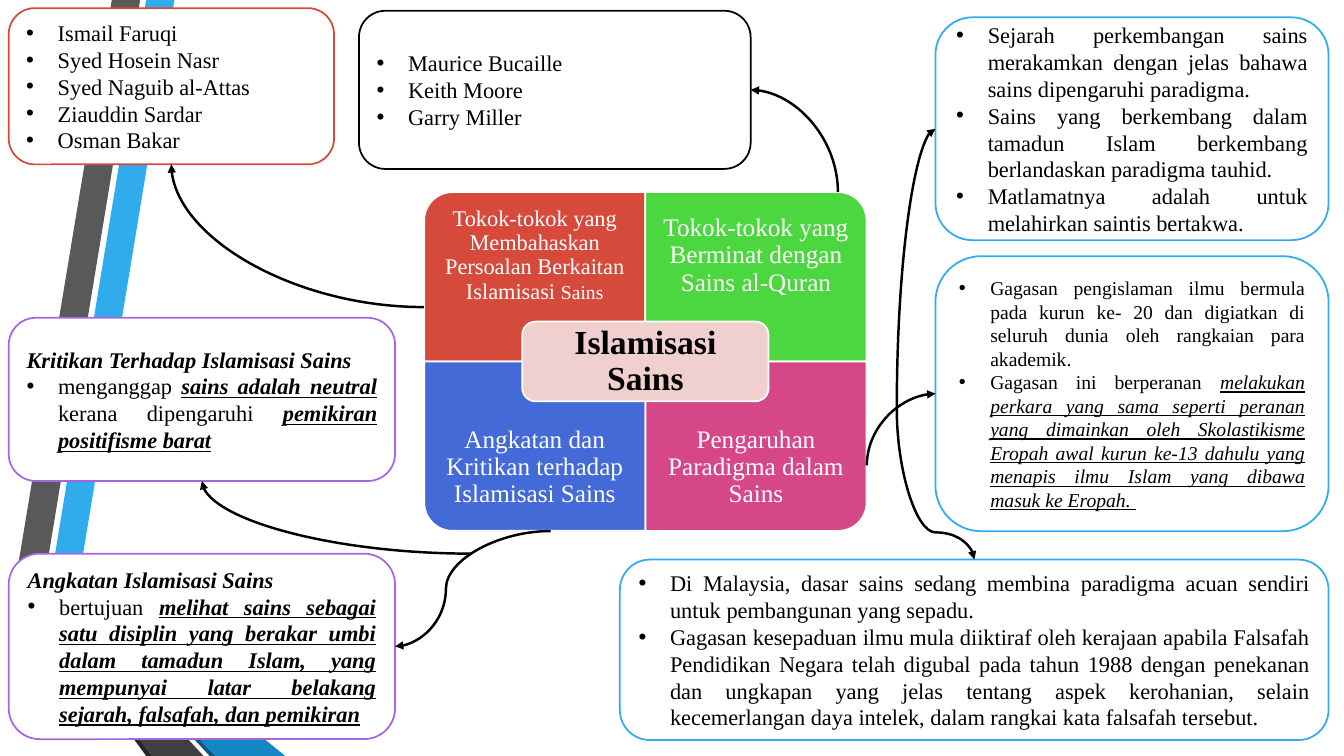
from lxml import etree
from pptx import Presentation
from pptx.dml.color import RGBColor
from pptx.enum.shapes import MSO_CONNECTOR, MSO_SHAPE
from pptx.enum.text import MSO_ANCHOR, PP_ALIGN
from pptx.oxml.ns import qn
from pptx.util import Pt

FONT = "Times New Roman"
BLACK, WHITE = "000000", "FFFFFF"
RED, BLUE, PURPLE = "D64A3B", "30ACEC", "A666E1"
BULLET_INDENT = 22.5

RIBBONS = [
    (BLUE, [(36, 416.2), (55.4, 419.8), (124.6, 0), (104.4, 0)]),
    ("595959", [(100.1, 0), (79.9, 0), (11.5, 412.6), (31.7, 415.4)]),
    ("262626", [(11.5, 412.6), (104.4, 540), (108.7, 540)]),
    ("0C5A82", [(36, 416.9), (149.8, 540), (154.1, 540)]),
    ("1287C3", [(36, 416.5), (154.1, 540), (203.8, 540), (55.4, 419.8)]),
    ("404040", [(11.5, 412.6), (108.7, 540), (145.4, 540), (34.6, 419.8), (31.7, 415.4)]),
]

# Column, row, rotation, fill, inset, runs of (text, size)
QUADRANTS = [
    (0, 0, 270, RED, 8.5, [("Tokok-tokok yang Membahaskan Persoalan Berkaitan Islamisasi ", 16),
                           ("Sains", 14)]),
    (1, 0, 0, "4CD63F", 10, [("Tokok-tokok yang Berminat dengan Sains al-Quran", 18)]),
    (0, 1, 180, "436AD6", 10, [("Angkatan dan Kritikan terhadap Islamisasi Sains", 18)]),
    (1, 1, 90, "D64787", 10, [("Pengaruhan Paradigma dalam Sains", 18)]),
]

# Box, outline, text size, heading, bullets made of (text, style) runs
CARDS = [
    ((6.2, 5.8, 232.4, 111.6), RED, 16, None,
     [[("Ismail Faruqi", "")], [("Syed Hosein Nasr", "")], [("Syed Naguib al-Attas", "")],
      [("Ziauddin Sardar", "")], [("Osman Bakar", "")]]),
    ((256.4, 7.7, 279.8, 113), BLACK, 16, None,
     [[("Maurice Bucaille", "")], [("Keith Moore", "")], [("Garry Miller", "")]]),
    ((6.2, 395.5, 276, 132.5), PURPLE, 16, "Angkatan Islamisasi Sains",
     [[("bertujuan ", ""),
       ("melihat sains sebagai satu disiplin yang berakar umbi dalam tamadun Islam, yang "
        "mempunyai latar belakang sejarah, falsafah, dan pemikiran", "biu")]]),
    ((6.2, 227, 276, 116.6), PURPLE, 16, "Kritikan Terhadap Islamisasi Sains",
     [[("menganggap ", ""), ("sains adalah neutral ", "biu"), ("kerana dipengaruhi ", ""),
       ("pemikiran positifisme barat", "biu")]]),
    ((668.2, 12.4, 280.8, 159.2), BLUE, 16, None,
     [[("Sejarah perkembangan sains merakamkan dengan jelas bahawa sains dipengaruhi paradigma.", "")],
      [("Sains yang berkembang dalam tamadun Islam berkembang berlandaskan paradigma tauhid.", "")],
      [("Matlamatnya adalah untuk melahirkan saintis bertakwa.", "")]]),
    ((668.2, 183, 280.8, 196.4), BLUE, 14, None,
     [[("Gagasan pengislaman ilmu bermula pada kurun ke- 20 dan digiatkan di seluruh dunia oleh "
        "rangkaian para akademik.", "")],
      [("Gagasan ini berperanan ", ""),
       ("melakukan perkara yang sama seperti peranan yang dimainkan oleh Skolastikisme Eropah "
        "awal kurun ke-13 dahulu yang menapis ilmu Islam yang dibawa masuk ke Eropah. ", "iu")]]),
    ((442.8, 399.7, 506.2, 128.9), BLUE, 16, None,
     [[("Di Malaysia, dasar sains sedang membina paradigma acuan sendiri untuk pembangunan yang "
        "sepadu.", "")],
      [("Gagasan kesepaduan ilmu mula diiktiraf oleh kerajaan apabila Falsafah Pendidikan Negara "
        "telah digubal pada tahun 1988 dengan penekanan dan ungkapan yang jelas tentang aspek "
        "kerohanian, selain kecemerlangan daya intelek, dalam rangkai kata falsafah tersebut.", "")]]),
]

# Start, end, whether it leaves vertically, bend share of an S curve (None for one bend)
ARROWS = [
    ((302.8, 219.4), (122.4, 117.4), False, None),
    ((598.5, 137.2), (536.2, 64.2), True, None),
    ((393.4, 379.3), (282.2, 461.7), False, 0.673),
    ((337, 395.5), (144.3, 343.6), False, None),
    ((640.6, 292.2), (668.2, 92), True, None),
    ((619.2, 332.4), (668.2, 281.2), True, None),
    ((640.6, 292.2), (696, 399.7), True, 0.82),
]


def color(hex_code):
    return RGBColor.from_string(hex_code)


def add_box(slide, kind, box, fill, outline):
    shape = slide.shapes.add_shape(kind, *map(Pt, box))
    shape.shadow.inherit = False
    shape.fill.solid()
    shape.fill.fore_color.rgb = color(fill)
    shape.line.color.rgb = color(outline)
    shape.line.width = Pt(1.25)
    return shape


def prepare_frame(shape, inset=None):
    frame = shape.text_frame
    frame.word_wrap = True
    frame.vertical_anchor = MSO_ANCHOR.MIDDLE
    if inset is not None:
        frame.margin_left = frame.margin_right = Pt(inset)
        frame.margin_top = frame.margin_bottom = Pt(inset)
    return frame


def style_paragraph(paragraph, size, hex_code, alignment):
    paragraph.alignment = alignment
    paragraph.font.name = FONT
    paragraph.font.size = Pt(size)
    paragraph.font.color.rgb = color(hex_code)


def add_styled_run(paragraph, text, style):
    """Add a run; style holds any of b, i and u."""
    run = paragraph.add_run()
    run.text = text
    if style:
        run.font.bold = "b" in style
        run.font.italic = "i" in style
        run.font.underline = "u" in style


def add_bullet(paragraph):
    properties = paragraph._p.get_or_add_pPr()
    properties.set("marL", str(Pt(BULLET_INDENT)))
    properties.set("indent", str(-Pt(BULLET_INDENT)))
    first = etree.Element(qn("a:buFont"), typeface="Arial")
    properties.insert(0, first)
    first.addnext(etree.Element(qn("a:buChar"), char="•"))


def draw_ribbons(slide):
    for fill, points in RIBBONS:
        corners = [(Pt(x), Pt(y)) for x, y in points]
        builder = slide.shapes.build_freeform(*corners[0])
        builder.add_line_segments(corners[1:], close=True)
        ribbon = builder.convert_to_shape()
        ribbon.shadow.inherit = False
        ribbon.fill.solid()
        ribbon.fill.fore_color.rgb = color(fill)
        ribbon.line.fill.background()


def draw_matrix(slide, left, top, width, height):
    """Draw four quadrants around a central title."""
    cell_width, cell_height = width / 2, height / 2
    text_height = cell_height * 0.75
    for column, row, rotation, fill, inset, runs in QUADRANTS:
        x, y = left + column * cell_width, top + row * cell_height
        w, h = (cell_height, cell_width) if rotation % 180 else (cell_width, cell_height)
        box = (x + (cell_width - w) / 2, y + (cell_height - h) / 2, w, h)
        quadrant = add_box(slide, MSO_SHAPE.ROUND_1_RECTANGLE, box, fill, WHITE)
        quadrant.rotation = rotation
        text_top = y + row * (cell_height - text_height)
        label = slide.shapes.add_textbox(Pt(x), Pt(text_top), Pt(cell_width), Pt(text_height))
        paragraph = prepare_frame(label, inset).paragraphs[0]
        style_paragraph(paragraph, runs[0][1], WHITE, PP_ALIGN.CENTER)
        paragraph.line_spacing = 0.9
        for text, size in runs:
            run = paragraph.add_run()
            run.text = text
            run.font.size = Pt(size)

    title_width, title_height = 176, 57
    title_box = (left + (width - title_width) / 2, top + (height - title_height) / 2,
                 title_width, title_height)
    title = add_box(slide, MSO_SHAPE.ROUNDED_RECTANGLE, title_box, "F0D0CE", WHITE)
    paragraph = prepare_frame(title, 7.2).paragraphs[0]
    paragraph.text = "Islamisasi Sains"
    style_paragraph(paragraph, 24, BLACK, PP_ALIGN.CENTER)
    paragraph.font.bold = True
    paragraph.line_spacing = 0.9


def draw_card(slide, box, outline, size, heading, bullets):
    card = add_box(slide, MSO_SHAPE.ROUNDED_RECTANGLE, box, WHITE, outline)
    frame = prepare_frame(card)
    lines = ([[(heading, "bi")]] if heading else []) + bullets
    for index, runs in enumerate(lines):
        paragraph = frame.add_paragraph() if index else frame.paragraphs[0]
        style_paragraph(paragraph, size, BLACK, PP_ALIGN.JUSTIFY)
        if index or not heading:
            add_bullet(paragraph)
        for text, style in runs:
            add_styled_run(paragraph, text, style)


def draw_arrow(slide, start, end, vertical, bend):
    """Draw a curved arrow; one leaving vertically is laid out flat, then turned by 270 degrees."""
    (x1, y1), (x2, y2) = start, end
    if vertical:
        center_x, center_y = (x1 + x2) / 2, (y1 + y2) / 2
        half_x, half_y = (y1 - y2) / 2, (x2 - x1) / 2
        x1, y1 = center_x - half_x, center_y - half_y
        x2, y2 = center_x + half_x, center_y + half_y
    arrow = slide.shapes.add_connector(MSO_CONNECTOR.CURVE, Pt(x1), Pt(y1), Pt(x2), Pt(y2))
    arrow.line.color.rgb = color(BLACK)
    arrow.line.width = Pt(1.75)
    properties = arrow._element.spPr
    if vertical:
        properties.find(qn("a:xfrm")).set("rot", str(270 * 60000))
    geometry = properties.find(qn("a:prstGeom"))
    if bend is None:
        geometry.set("prst", "curvedConnector2")
    else:
        etree.SubElement(geometry.find(qn("a:avLst")), qn("a:gd"),
                         name="adj1", fmla=f"val {round(bend * 100000)}")
    etree.SubElement(properties.find(qn("a:ln")), qn("a:tailEnd"), type="triangle")
    etree.SubElement(properties, qn("a:effectLst"))


def main():
    presentation = Presentation()
    presentation.slide_width, presentation.slide_height = Pt(960), Pt(540)
    slide = presentation.slides.add_slide(presentation.slide_layouts[6])
    draw_ribbons(slide)
    draw_matrix(slide, 303, 137.2, 316, 242)
    for card in CARDS:
        draw_card(slide, *card)
    for arrow in ARROWS:
        draw_arrow(slide, *arrow)
    presentation.save("out.pptx")


if __name__ == "__main__":
    main()
